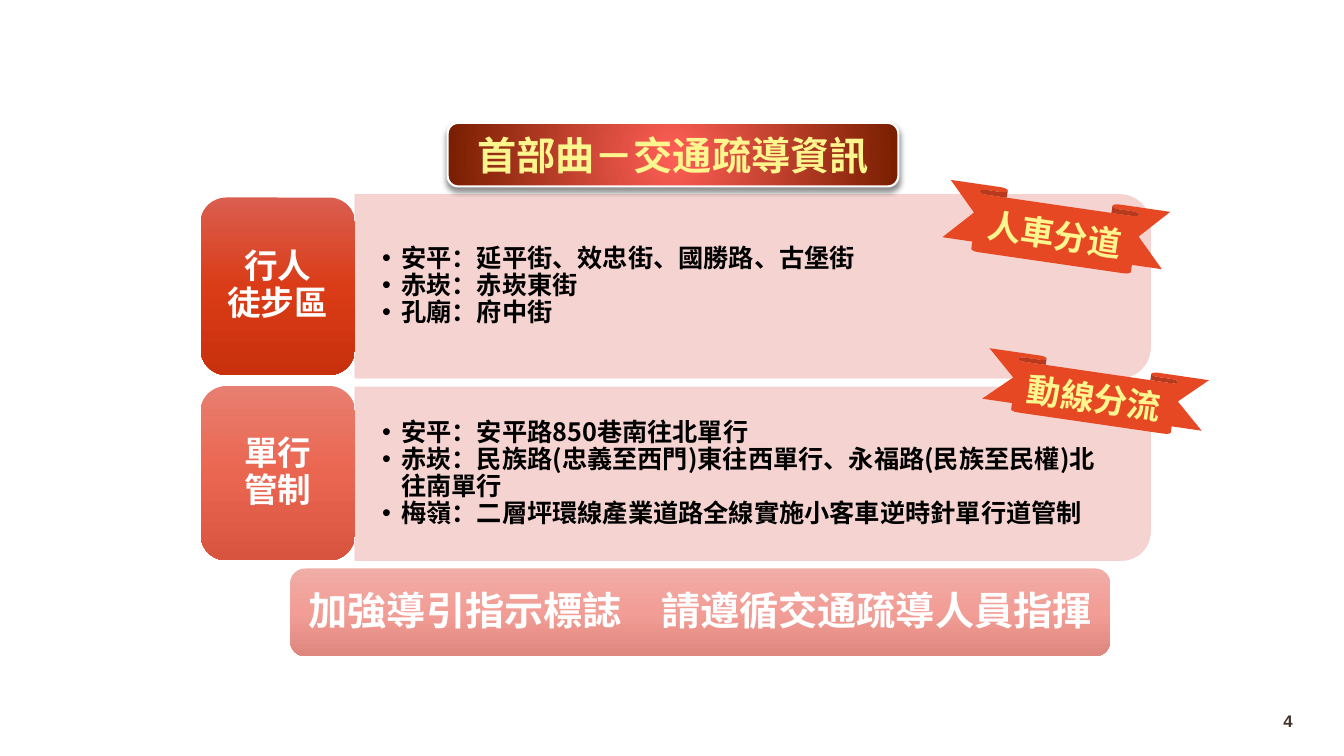
"""Build the traffic guidance slide with two control rows and a closing banner."""
from dataclasses import dataclass

from lxml import etree
from pptx import Presentation
from pptx import util as u
from pptx.dml.color import RGBColor
from pptx.enum import shapes, text
from pptx.oxml.ns import qn


@dataclass(frozen=True)
class Theme:
    """Colours, fonts and type sizes of the slide."""
    font: str = "Noto Sans CJK SC"
    number_font: str = "Arial"
    white: str = "FFFFFF"
    black: str = "000000"
    yellow: str = "FDF58D"
    brown: str = "41342F"
    ribbon: str = "E64823"
    panel: str = "F5CFCD"
    title_stops: tuple = ("FF5F56", "781E00")
    walk_stops: tuple = ("DA5E4F", "DA3C17", "C9300D")
    oneway_stops: tuple = ("E87E6F", "EB6651", "D9543F")
    banner_stops: tuple = ("F1ADA7", "F29D95", "DD877F")
    heading: int = 28
    label: int = 24
    body: int = 18
    number: int = 12


THEME = Theme()
SHAPE = shapes.MSO_SHAPE
ALIGN = text.PP_ALIGN
PANEL_LEFT, PANEL_WIDTH = 3.52, 7.89
LABEL_LEFT, LABEL_WIDTH = 1.99, 1.53
ROWS = (
    ("行人\n徒步區", THEME.walk_stops, (1.96, 1.76), (1.93, 1.82),
     ("安平：延平街、效忠街、國勝路、古堡街", "赤崁：赤崁東街", "孔廟：府中街")),
    ("單行\n管制", THEME.oneway_stops, (3.83, 1.73), (3.84, 1.72),
     ("安平：安平路850巷南往北單行",
      "赤崁：民族路(忠義至西門)東往西單行、永福路(民族至民權)北往南單行",
      "梅嶺：二層坪環線產業道路全線實施小客車逆時針單行道管制")),
)
RIBBONS = (("人車分道", 9.37, 1.94, 0.67), ("動線分流", 9.76, 3.61, 0.59))


def add_element(parent, tag, **attributes):
    """Append a DrawingML element to its parent."""
    return etree.SubElement(parent, qn(tag), {k: str(v) for k, v in attributes.items()})


def style_paragraph(paragraph, size, color, font=THEME.font, align=ALIGN.CENTER, spacing=None):
    """Set alignment and a bold font for Latin and East Asian text."""
    paragraph.alignment = align
    paragraph.line_spacing = spacing
    paragraph.font.size = u.Pt(size)
    paragraph.font.bold = True
    paragraph.font.color.rgb = RGBColor.from_string(color)
    paragraph.font.name = font
    add_element(paragraph._p.pPr.find(qn("a:defRPr")), "a:ea", typeface=font)


def write_text(shape, wording, size, color, wrap=True, **style):
    """Write one vertically centred paragraph into a shape."""
    frame = shape.text_frame
    frame.word_wrap = wrap
    frame.vertical_anchor = text.MSO_ANCHOR.MIDDLE
    frame.paragraphs[0].text = wording
    style_paragraph(frame.paragraphs[0], size, color, **style)


def add_plain_shape(slide, kind, left, top, width, height):
    """Add a preset shape with no outline and no shadow."""
    shape = slide.shapes.add_shape(kind, *map(u.Inches, (left, top, width, height)))
    shape.line.fill.background()
    shape.shadow.inherit = False
    return shape


def fill_solid(shape, color):
    """Fill a shape with one colour."""
    shape.fill.solid()
    shape.fill.fore_color.rgb = RGBColor.from_string(color)


def fill_gradient(shape, colors, radial=False):
    """Fill a shape with evenly spaced stops, downwards or from the centre."""
    shape.fill.gradient()
    gradient = shape._element.spPr.find(qn("a:gradFill"))
    for child in list(gradient):
        gradient.remove(child)
    stops = add_element(gradient, "a:gsLst")
    for index, color in enumerate(colors):
        stop = add_element(stops, "a:gs", pos=100000 * index // (len(colors) - 1))
        add_element(stop, "a:srgbClr", val=color)
    if radial:
        circle = add_element(gradient, "a:path", path="circle")
        add_element(circle, "a:fillToRect", l=50000, t=50000, r=50000, b=50000)
    else:
        add_element(gradient, "a:lin", ang=5400000, scaled=0)


def add_panel(slide, top, height):
    """Add a pale panel whose right corners are rounded."""
    left = PANEL_LEFT + (PANEL_WIDTH - height) / 2
    upright_top = top + (height - PANEL_WIDTH) / 2
    panel = add_plain_shape(slide, SHAPE.ROUND_2_SAME_RECTANGLE,
                            left, upright_top, height, PANEL_WIDTH)
    panel.rotation = 90
    fill_solid(panel, THEME.panel)
    panel.line.width = u.Pt(0.5)
    panel.line.color.rgb = RGBColor.from_string(THEME.panel)
    for color in panel._element.spPr.iter(qn("a:srgbClr")):
        add_element(color, "a:alpha", val=90000)


def add_bullets(slide, top, height, items):
    """Add the bulleted list that lies on a panel."""
    box = slide.shapes.add_textbox(*map(u.Inches, (PANEL_LEFT, top, 7.8, height)))
    frame = box.text_frame
    frame.word_wrap = True
    frame.vertical_anchor = text.MSO_ANCHOR.MIDDLE
    frame.margin_left = frame.margin_right = u.Inches(0.27)
    frame.margin_top = frame.margin_bottom = u.Inches(0.14)
    for index, item in enumerate(items):
        paragraph = frame.add_paragraph() if index else frame.paragraphs[0]
        paragraph.text = item
        properties = paragraph._p.get_or_add_pPr()
        properties.set("marL", str(u.Inches(0.19)))
        properties.set("indent", str(-u.Inches(0.19)))
        add_element(properties, "a:buFont", typeface="Arial")
        add_element(properties, "a:buChar", char="•")
        style_paragraph(paragraph, THEME.body, THEME.black, align=ALIGN.LEFT, spacing=0.9)


def add_card(slide, wording, colors, size, *place):
    """Add a rounded gradient card with white text."""
    card = add_plain_shape(slide, SHAPE.ROUNDED_RECTANGLE, *place)
    fill_gradient(card, colors)
    write_text(card, wording, size, THEME.white, spacing=0.9)


def add_ribbon(slide, wording, left, top, height):
    """Add a tilted ribbon with a short slogan."""
    ribbon = add_plain_shape(slide, SHAPE.DOWN_RIBBON, left, top, 2.2, height)
    ribbon.adjustments[0], ribbon.adjustments[1] = 0.142, 0.727
    ribbon.rotation = 8.3
    fill_solid(ribbon, THEME.ribbon)
    write_text(ribbon, wording, THEME.label, THEME.yellow, wrap=False)


def add_title(slide, wording):
    """Add the title plate with its white outline and soft shadow."""
    plate = add_plain_shape(slide, SHAPE.ROUNDED_RECTANGLE, 4.44, 1.22, 4.47, 0.63)
    fill_gradient(plate, THEME.title_stops, radial=True)
    plate.line.color.rgb = RGBColor.from_string(THEME.white)
    plate.line.width = u.Pt(1.5)
    shadow = add_element(plate._element.spPr.find(qn("a:effectLst")), "a:outerShdw",
                         blurRad=u.Pt(4), dist=u.Pt(3), dir=5400000, rotWithShape=0)
    color = add_element(shadow, "a:srgbClr", val=THEME.black)
    add_element(color, "a:alpha", val=44000)
    write_text(plate, wording, THEME.heading, THEME.yellow, wrap=False)


def main():
    """Build the slide and save it."""
    presentation = Presentation()
    presentation.slide_width, presentation.slide_height = u.Inches(13.33), u.Inches(7.5)
    slide = presentation.slides.add_slide(presentation.slide_layouts[6])
    for label, colors, label_span, panel_span, items in ROWS:
        add_panel(slide, *panel_span)
        add_bullets(slide, *panel_span, items)
        add_card(slide, label, colors, THEME.label,
                 LABEL_LEFT, label_span[0], LABEL_WIDTH, label_span[1])
    add_card(slide, "加強導引指示標誌　請遵循交通疏導人員指揮", THEME.banner_stops,
             THEME.heading, 2.88, 5.64, 8.13, 0.87)
    for ribbon in RIBBONS:
        add_ribbon(slide, *ribbon)
    add_title(slide, "首部曲－交通疏導資訊")
    number = slide.shapes.add_textbox(*map(u.Inches, (9.92, 6.95, 3, 0.4)))
    write_text(number, "4", THEME.number, THEME.brown,
               font=THEME.number_font, align=ALIGN.RIGHT)
    presentation.save("out.pptx")


if __name__ == "__main__":
    main()
